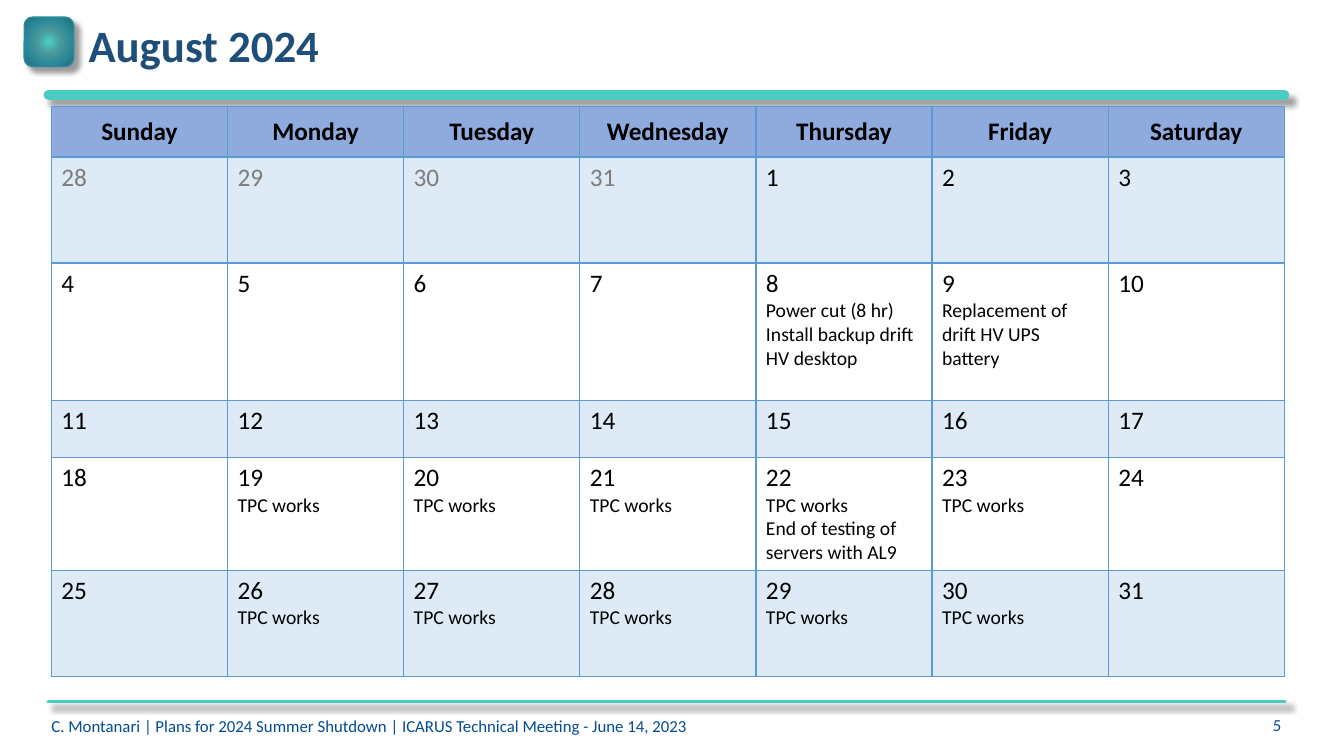
from lxml.etree import SubElement as Sub
from pptx import Presentation
from pptx.dml.color import RGBColor as RGB
from pptx.enum.shapes import MSO_CONNECTOR as LINK, MSO_SHAPE as SHAPE
from pptx.enum.text import MSO_ANCHOR as ANCHOR, PP_ALIGN as ALIGN
from pptx.oxml import parse_xml
from pptx.oxml.ns import nsdecls, qn
from pptx.util import Inches, Pt

HUES = {"teal": "4BCCC3", "edge": "2B8999", "blue": "5B9BD5",
        "head": "8FAADC", "title": "1F4E79", "foot": "004C97",
        "ink": "000000", "gray": "7C7C7C"}
STOPS = [(3, "4BCCC3"), (36, "49979A"), (64, "2B8999"), (96, "216E79")]
FORMS = {
    "title": {"size": Pt(32), "bold": True},
    "head": {"size": Pt(18), "bold": True},
    "day": {"size": Pt(18), "bold": False},
    "note": {"size": Pt(14), "bold": False},
    "foot": {"size": Pt(12), "bold": False},
}
DAYS = ["Sunday", "Monday", "Tuesday", "Wednesday", "Thursday", "Friday", "Saturday"]
ROWS = [0.5, 1.05, 1.36, 0.57, 1.12, 1.05]
WORK = "TPC works"
# Notes by day of August
NOTES = {day: [WORK] for day in [*range(19, 24), *range(26, 31)]}
NOTES[8] = ["Power cut (8 hr)", "Install backup drift HV desktop"]
NOTES[9] = ["Replacement of drift HV UPS battery"]
NOTES[22] = [WORK, "End of testing of servers with AL9"]


def style(para, form, hue):
    font = para.font
    for key, val in {"name": "Calibri", **FORMS[form]}.items():
        setattr(font, key, val)
    font.color.rgb = RGB.from_string(HUES[hue])


def add_shadow(shape):
    props = shape._element.spPr
    for old in props.findall(qn("a:effectLst")):
        props.remove(old)
    props.append(parse_xml(
        f'<a:effectLst {nsdecls("a")}><a:outerShdw blurRad="{Pt(4)}" dist="{Pt(6)}" '
        'dir="2700000" algn="tl" rotWithShape="0"><a:srgbClr val="000000">'
        '<a:alpha val="40000"/></a:srgbClr></a:outerShdw></a:effectLst>'))


def add_badge(slide):
    badge = slide.shapes.add_shape(SHAPE.ROUNDED_RECTANGLE, Inches(0.24), Inches(0.17),
                                   Inches(0.49), Inches(0.49))
    badge.line.color.rgb = RGB.from_string(HUES["edge"])
    badge.line.width = Pt(1)
    stops = "".join(f'<a:gs pos="{pos * 1000}"><a:srgbClr val="{hue}"/></a:gs>'
                    for pos, hue in STOPS)
    grad = parse_xml(
        f'<a:gradFill {nsdecls("a")} rotWithShape="1"><a:gsLst>{stops}</a:gsLst>'
        '<a:path path="circle"><a:fillToRect l="50000" t="50000" r="50000" b="50000"/>'
        '</a:path></a:gradFill>')
    badge._element.spPr.find(qn("a:prstGeom")).addnext(grad)
    add_shadow(badge)


def add_rule(slide, top, width):
    rule = slide.shapes.add_connector(LINK.STRAIGHT, Inches(0.48), Inches(top),
                                      Inches(12.74), Inches(top))
    rule.line.color.rgb = RGB.from_string(HUES["teal"])
    rule.line.width = Pt(width)
    rule.line._ln.set("cap", "rnd")
    add_shadow(rule)


def add_text(slide, place, text, form, pad=0, align=ALIGN.LEFT, anchor=ANCHOR.TOP):
    frame = slide.shapes.add_textbox(*map(Inches, place)).text_frame
    frame.word_wrap = True
    frame.vertical_anchor = anchor
    for side in ("left", "right", "top", "bottom"):
        setattr(frame, f"margin_{side}", Inches(pad))
    para = frame.paragraphs[0]
    para.text = text
    para.alignment = align
    style(para, form, form)
    return para


def set_edges(cell, base):
    props = cell._tc.get_or_add_tcPr()
    for spot, side in enumerate("LRTB"):
        width = Pt(base if side == "B" else 1)
        props.insert(spot, parse_xml(
            f'<a:ln{side} {nsdecls("a")} w="{width}"><a:solidFill>'
            f'<a:srgbClr val="{HUES["blue"]}"/></a:solidFill></a:ln{side}>'))


def set_fill(cell, hue, alpha=100):
    cell.fill.solid()
    cell.fill.fore_color.rgb = RGB.from_string(HUES[hue])
    if alpha < 100:
        tint = cell._tc.tcPr.find(".//" + qn("a:srgbClr"))
        Sub(tint, qn("a:alpha")).set("val", str(alpha * 1000))


def fill_head(cell, name):
    cell.text = name
    cell.vertical_anchor = ANCHOR.MIDDLE
    para = cell.text_frame.paragraphs[0]
    para.alignment = ALIGN.CENTER
    style(para, "head", "ink")
    set_fill(cell, "head")
    set_edges(cell, 2)


def fill_day(cell, day, band):
    # Days below 1 belong to July
    label = day if day > 0 else day + 31
    cell.text = "\n".join([str(label), *NOTES.get(day, [])])
    for spot, para in enumerate(cell.text_frame.paragraphs):
        style(para, "note" if spot else "day", "ink" if day > 0 else "gray")
    if band:
        set_fill(cell, "blue", 20)
    else:
        cell.fill.background()
    set_edges(cell, 1)


def add_month(slide):
    table = slide.shapes.add_table(len(ROWS), len(DAYS), Inches(0.51), Inches(1.06),
                                   Inches(12.23), Inches(sum(ROWS))).table
    table.first_row = table.horz_banding = False
    for row, height in zip(table.rows, ROWS):
        row.height = Inches(height)
    for col, name in enumerate(DAYS):
        fill_head(table.cell(0, col), name)
        for week in range(1, len(ROWS)):
            day = (week - 1) * 7 + col - 3
            fill_day(table.cell(week, col), day, week % 2)


def main():
    deck = Presentation()
    deck.slide_width, deck.slide_height = Inches(13.33), Inches(7.5)
    slide = deck.slides.add_slide(deck.slide_layouts[6])

    # Frame of the page
    add_badge(slide)
    add_rule(slide, 0.94, 7)
    add_rule(slide, 6.96, 2.75)

    # Footer and title
    add_text(slide, (12.11, 7.09, 0.6, 0.27), "5", "foot", align=ALIGN.RIGHT)
    add_text(slide, (0.51, 7.1, 8.99, 0.26),
             "C. Montanari | Plans for 2024 Summer Shutdown | "
             "ICARUS Technical Meeting - June 14, 2023", "foot")
    title = add_text(slide, (0.78, 0.21, 12.55, 0.54), "August 2024", "title",
                     pad=0.1, anchor=ANCHOR.MIDDLE)
    title.line_spacing = 0.9

    # Calendar
    add_month(slide)
    deck.save("out.pptx")


if __name__ == "__main__":
    main()
